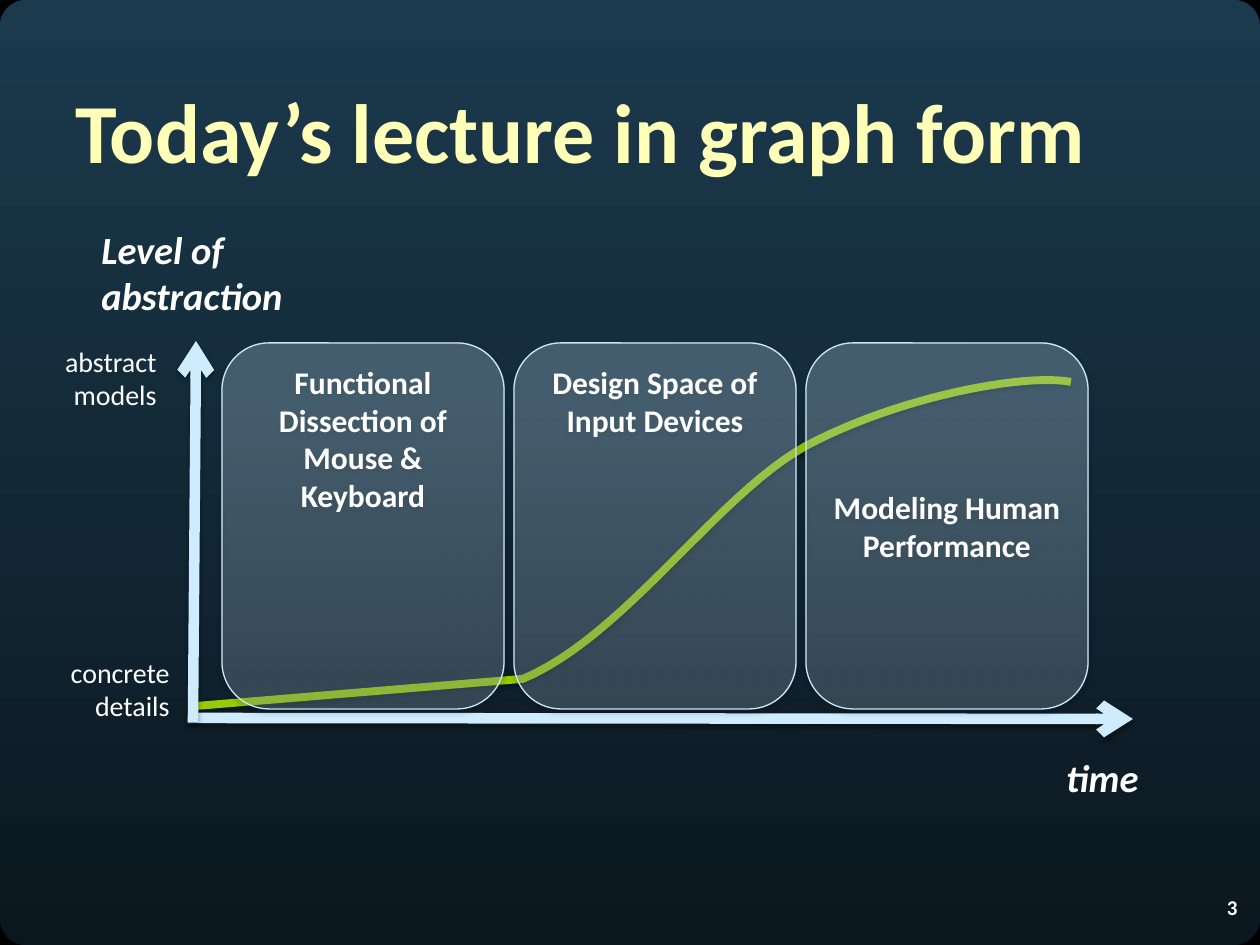
from copy import deepcopy
from dataclasses import dataclass
from math import cos, radians, sin

from lxml.etree import SubElement
from pptx import Presentation
from pptx.dml.color import RGBColor
from pptx.enum.shapes import MSO_CONNECTOR, MSO_SHAPE
from pptx.enum.text import MSO_ANCHOR, MSO_AUTO_SIZE, PP_ALIGN
from pptx.oxml.ns import qn
from pptx.util import Inches, Pt

PX = 7257  # EMU per pixel, 126 pixels to the inch


@dataclass(frozen=True)
class Theme:
    font: str = "Calibri"
    title: str = "FFFFB7"
    text: str = "FFFFFF"
    axis: str = "CFECFF"
    curve: str = "99CC00"
    corner: str = "000000"
    border: str = "C9E7FB"
    # Gradient stops run upwards: position, colour, opacity in percent
    backdrop: tuple = ((0, "0B171F", 100), (100, "1B3A4D", 100))
    glass: tuple = ((0, "95B1C4", 28), (80, "C2E6FE", 28), (100, "C3E7FF", 28))
    title_size: int = 48
    axis_size: int = 22
    phase_size: int = 18
    label_size: int = 16
    number_size: int = 12


def bezier(start, control_1, control_2, end, steps=24):
    """Sample a cubic curve, leaving out its start point."""
    points = []
    for step in range(1, steps + 1):
        t = step / steps
        weights = ((1 - t) ** 3, 3 * t * (1 - t) ** 2, 3 * t * t * (1 - t), t ** 3)
        points.append(tuple(
            sum(weight * value for weight, value in zip(weights, values))
            for values in zip(start, control_1, control_2, end)
        ))
    return points


theme = Theme()
deck = Presentation()
deck.slide_width, deck.slide_height = Inches(10), Inches(7.5)
page = deck.slides.add_slide(deck.slide_layouts[5])
shapes = page.shapes
gradients = [(page.background.fill, page.element, theme.backdrop)]
shadows = []
texts = []

# Rounded slide corners and the abstraction curve
outlines = []
for x, y, first_angle in ((1234, 26, 270), (26, 26, 180), (26, 919, 90), (1234, 919, 0)):
    angles = [radians(first_angle + turn) for turn in range(0, 91, 5)]
    arc = [(x + 35 * cos(angle), y + 35 * sin(angle)) for angle in angles]
    outlines.append((arc, theme.corner, 10, 0))
curve = [(197, 706), (523, 679)]
curve += bezier(curve[-1], (625, 636), (716, 496), (806, 446))
curve += bezier(curve[-1], (898, 397), (1024, 373), (1071, 382))
outlines.append((curve, theme.curve, 4.5, 38))

for points, color, width, shadow_opacity in outlines:
    start, *rest = [(round(x * PX), round(y * PX)) for x, y in points]
    builder = shapes.build_freeform(*start)
    builder.add_line_segments(rest, close=False)
    outline = builder.convert_to_shape()
    outline.fill.background()
    outline.line.color.rgb = RGBColor.from_string(color)
    outline.line.width = Pt(width)
    shadows.append((outline, shadow_opacity))

# Axes
for ends in ((188, 718, 1133, 719), (193, 722, 196, 341)):
    axis = shapes.add_connector(MSO_CONNECTOR.STRAIGHT, *(value * PX for value in ends))
    axis.line.color.rgb = RGBColor.from_string(theme.axis)
    axis.line.width = Pt(6)
    SubElement(axis.line._get_or_add_ln(), qn("a:tailEnd"), type="arrow")
    shadows.append((axis, 38))

# Title
title = shapes.title
title.left, title.top, title.width, title.height = (value * PX for value in (63, 73, 1218, 141))
title.text_frame.auto_size = MSO_AUTO_SIZE.NONE
title.text_frame.vertical_anchor = MSO_ANCHOR.TOP
title_format = {"size": Pt(theme.title_size), "bold": True}
texts.append((title, "Today’s lecture in graph form", PP_ALIGN.LEFT, title_format, theme.title))

# Axis names, scale labels and slide number
axis_format = {"size": Pt(theme.axis_size), "bold": True, "italic": True}
label_format = {"size": Pt(theme.label_size)}
number_format = {"size": Pt(theme.number_size), "bold": True}
for place, wording, align, text_format in (
    ((1051, 748, 100, 59), "time", PP_ALIGN.RIGHT, axis_format),
    ((89, 220, 214, 106), "Level of\nabstraction", PP_ALIGN.LEFT, axis_format),
    ((52, 649, 130, 81), "concrete\ndetails", PP_ALIGN.RIGHT, label_format),
    ((48, 338, 121, 81), "abstract\nmodels", PP_ALIGN.RIGHT, label_format),
    ((1155, 882, 95, 50), "3", PP_ALIGN.RIGHT, number_format),
):
    box = shapes.add_textbox(*(value * PX for value in place))
    if text_format is number_format:
        box.text_frame.word_wrap = True
        box.text_frame.vertical_anchor = MSO_ANCHOR.MIDDLE
    else:
        box.text_frame.word_wrap = False
        box.text_frame.auto_size = MSO_AUTO_SIZE.SHAPE_TO_FIT_TEXT
    texts.append((box, wording, align, text_format, theme.text))

# Lecture phases
phase_format = {"size": Pt(theme.phase_size), "bold": True}
for index, (wording, anchor) in enumerate((
    ("Functional Dissection of Mouse & Keyboard", MSO_ANCHOR.TOP),
    ("Design Space of Input Devices", MSO_ANCHOR.TOP),
    ("Modeling Human Performance", MSO_ANCHOR.MIDDLE),
)):
    place = (222 + 292 * index, 343, 282, 366)
    phase = shapes.add_shape(MSO_SHAPE.ROUNDED_RECTANGLE, *(value * PX for value in place))
    phase.line.color.rgb = RGBColor.from_string(theme.border)
    phase.line.width = Pt(0.75)
    phase.text_frame.word_wrap = True
    phase.text_frame.vertical_anchor = anchor
    gradients.append((phase.fill, phase.element, theme.glass))
    shadows.append((phase, 35))
    texts.append((phase, wording, PP_ALIGN.CENTER, phase_format, theme.text))

for box, wording, align, text_format, color in texts:
    para = box.text_frame.paragraphs[0]
    para.text = wording
    para.alignment = align
    for span in para.runs:
        span.font.name = theme.font
        span.font.color.rgb = RGBColor.from_string(color)
        for name, value in text_format.items():
            setattr(span.font, name, value)
    # A line break takes the type size of the text around it
    for line_break in para._p.findall(qn("a:br")):
        line_break.append(deepcopy(para.runs[0].font._element))

for fill, element, stops in gradients:
    fill.gradient()
    fill.gradient_angle = 90
    stop_list = element.find(".//" + qn("a:gsLst"))
    for old_stop in list(stop_list):
        stop_list.remove(old_stop)
    for position, color, opacity in stops:
        stop = SubElement(stop_list, qn("a:gs"), pos=str(position * 1000))
        tint = SubElement(stop, qn("a:srgbClr"), val=color)
        SubElement(tint, qn("a:alpha"), val=str(opacity * 1000))

for shape, opacity in shadows:
    effects = SubElement(shape.element.spPr, qn("a:effectLst"))
    if opacity:
        shadow = SubElement(effects, qn("a:outerShdw"), blurRad=str(Pt(3.1)),
                            dist=str(Pt(1.6)), dir="5400000", rotWithShape="0")
        tint = SubElement(shadow, qn("a:srgbClr"), val="000000")
        SubElement(tint, qn("a:alpha"), val=str(opacity * 1000))

deck.save("out.pptx")
